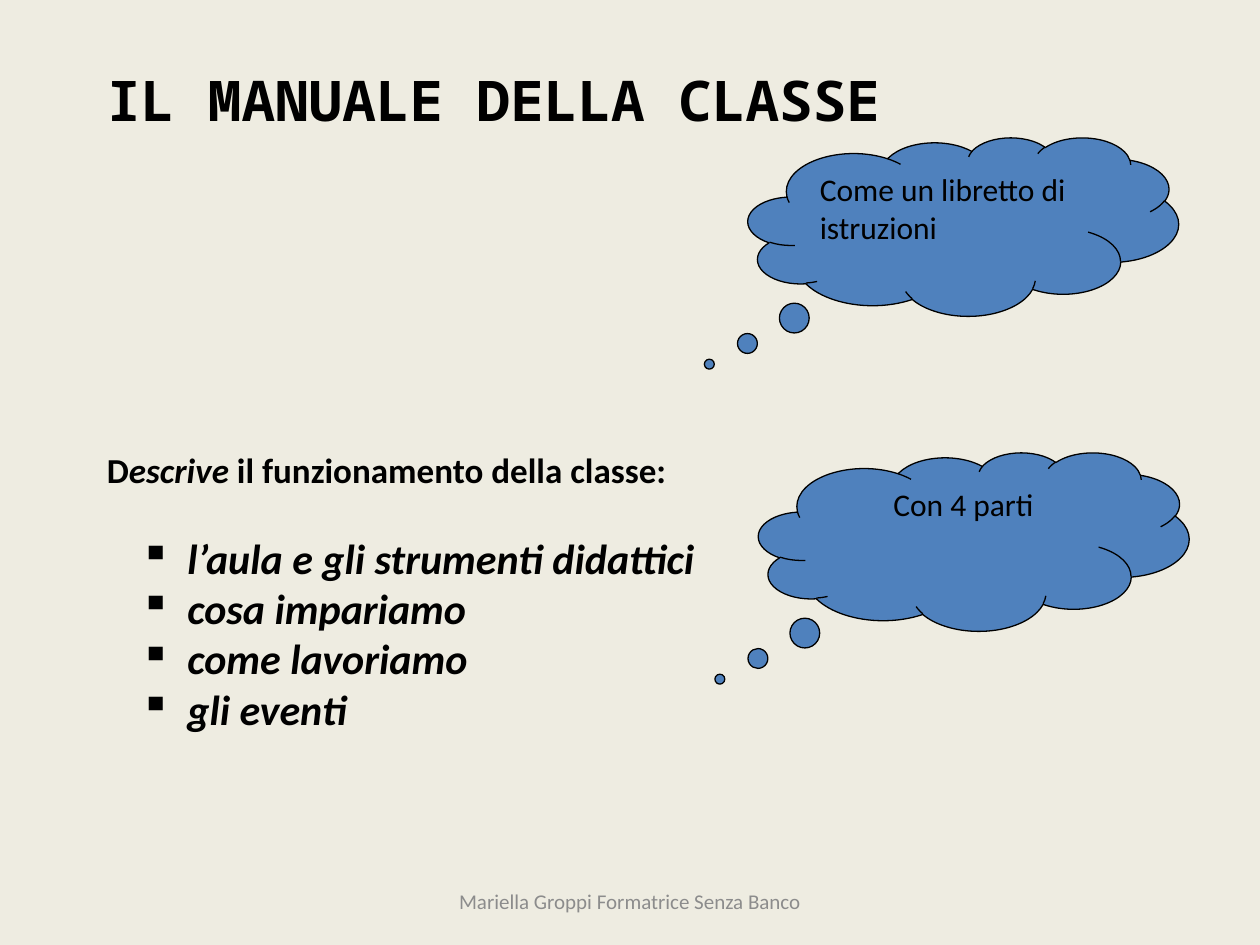
import pptx
import pptx.dml.color
import pptx.enum.shapes
import pptx.enum.text
import pptx.oxml
import pptx.util

Pt = pptx.util.Pt
ALIGN = pptx.enum.text.PP_ALIGN
ANCHOR = pptx.enum.text.MSO_ANCHOR
COLOURS = {"background": "EEECE1", "cloud": "4F81BD", "ink": "000000", "footer": "8C8C8C"}
TOPICS = ["l’aula e gli strumenti didattici", "cosa impariamo", "come lavoriamo", "gli eventi"]


def colour(name):
    return pptx.dml.color.RGBColor.from_string(COLOURS[name])


def add_span(para, text, size, bold=False, italic=False, ink="ink", font="Calibri"):
    span = para.add_run()
    span.text = text
    span.font.name = font
    span.font.size = Pt(size)
    span.font.bold = bold
    span.font.italic = italic
    span.font.color.rgb = colour(ink)


def set_frame(shape, anchor=ANCHOR.TOP, align=ALIGN.LEFT):
    """Prepare a shape's text and return its first paragraph."""
    frame = shape.text_frame
    frame.word_wrap = True
    frame.auto_size = pptx.enum.text.MSO_AUTO_SIZE.NONE
    frame.vertical_anchor = anchor
    para = frame.paragraphs[0]
    para.alignment = align
    return para


def add_box(page, left, top, width, height):
    return page.shapes.add_textbox(Pt(left), Pt(top), Pt(width), Pt(height))


def set_indent(para, margin, first_line=0):
    properties = para._p.get_or_add_pPr()
    properties.set("marL", str(Pt(margin)))
    properties.set("indent", str(Pt(first_line)))
    return properties


def add_title(page, text):
    title = page.shapes.title
    title.left, title.top, title.width, title.height = Pt(54), Pt(34), Pt(648), Pt(48)
    para = set_frame(title)
    para.space_before = Pt(0)
    add_span(para, text, 32, bold=True, font="Noto Sans Mono")


def add_cloud(page, left, top, text, margin=0):
    cloud = page.shapes.add_shape(
        pptx.enum.shapes.MSO_SHAPE.CLOUD_CALLOUT, Pt(left), Pt(top), Pt(246), Pt(102))
    cloud.adjustments[0] = -0.59
    cloud.adjustments[1] = 0.771
    cloud.shadow.inherit = False
    cloud.fill.solid()
    cloud.fill.fore_color.rgb = colour("cloud")
    cloud.line.color.rgb = colour("ink")
    cloud.line.width = Pt(0.75)
    para = set_frame(cloud)
    set_indent(para, margin)
    add_span(para, text, 18)


def add_bullet(frame, text):
    para = frame.add_paragraph()
    properties = set_indent(para, 46, -27)
    bullet = pptx.oxml.parse_xml(
        '<a:buChar xmlns:a="http://schemas.openxmlformats.org/drawingml/2006/main" char="▪"/>')
    properties.append(bullet)
    add_span(para, text, 24, bold=True, italic=True)
    return para


def add_description(page):
    box = add_box(page, 54, 252.5, 360, 172)
    para = set_frame(box)
    add_span(para, "D", 20, bold=True)
    add_span(para, "escrive", 20, bold=True, italic=True)
    add_span(para, " il funzionamento della classe:", 20, bold=True)
    bullets = [add_bullet(box.text_frame, topic) for topic in TOPICS]
    bullets[0].space_before = Pt(24)


def add_footer(page, text):
    box = add_box(page, 246, 500.5, 228, 29)
    add_span(set_frame(box, ANCHOR.MIDDLE, ALIGN.CENTER), text, 12, ink="footer")


def main():
    deck = pptx.Presentation()
    deck.slide_width, deck.slide_height = Pt(720), Pt(540)
    page = deck.slides.add_slide(deck.slide_layouts[5])
    page.background.fill.solid()
    page.background.fill.fore_color.rgb = colour("background")

    # Heading and footer
    add_title(page, "IL MANUALE DELLA CLASSE")
    add_footer(page, "Mariella Groppi Formatrice Senza Banco")

    # Thought clouds
    add_cloud(page, 427.5, 78.5, "Come un libretto di istruzioni")
    add_cloud(page, 433.5, 258.5, "Con 4 parti", margin=36)

    # Description with the four parts
    add_description(page)
    deck.save("out.pptx")


if __name__ == "__main__":
    main()
